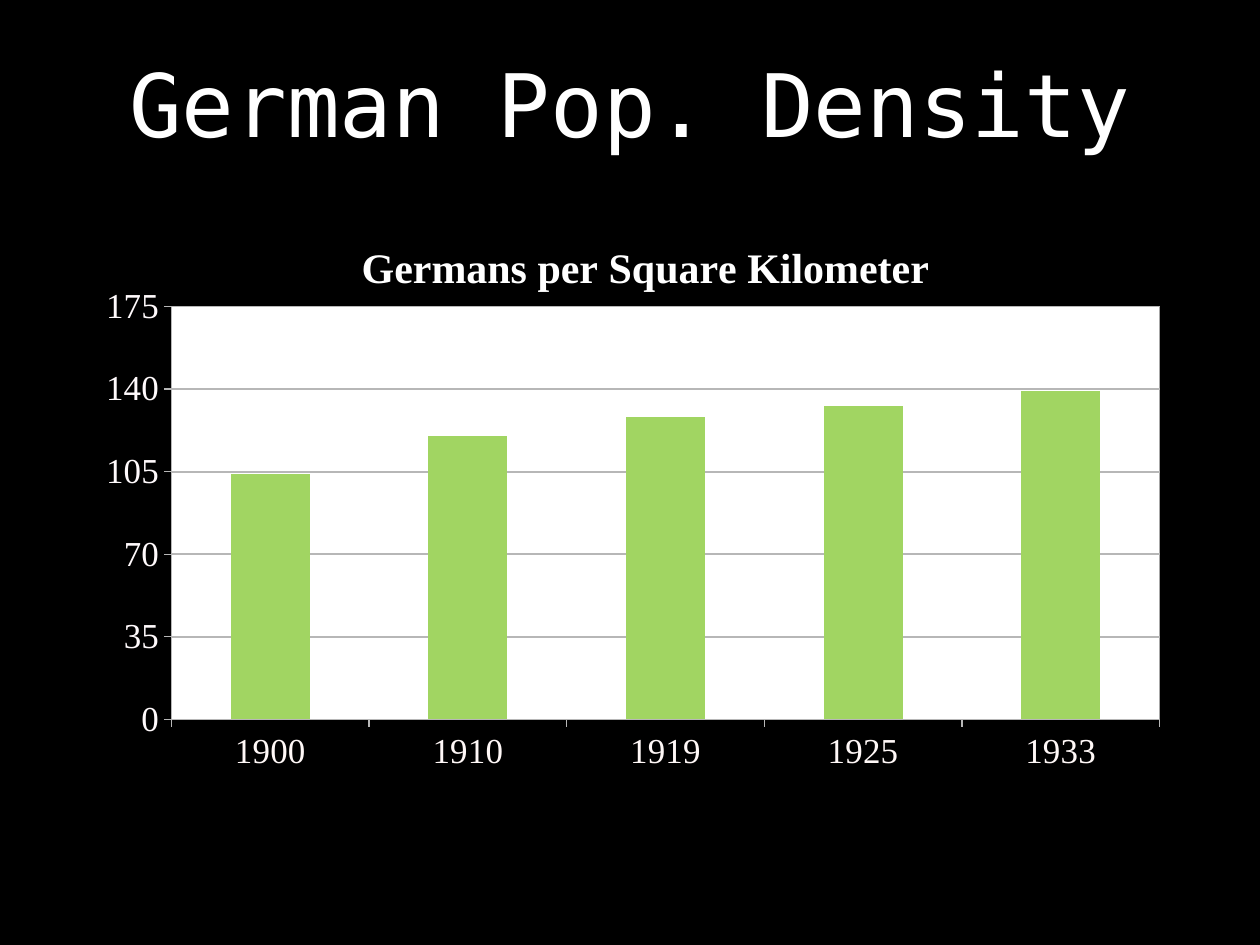
"""Build a slide with a column chart of German population density."""
from lxml import etree
from pptx import Presentation
from pptx.chart.data import CategoryChartData
from pptx.dml.color import RGBColor
from pptx.enum.chart import XL_CHART_TYPE, XL_TICK_LABEL_POSITION, XL_TICK_MARK
from pptx.enum.text import MSO_ANCHOR, PP_ALIGN
from pptx.oxml import parse_xml
from pptx.util import Inches, Pt

COLORS = {"black": "000000", "white": "FFFFFF", "green": "A1D562",
          "gray": "B7B7B7", "years": "FFF8F7", "values": "FFFAFC"}
NS = ('xmlns:c="http://schemas.openxmlformats.org/drawingml/2006/chart" '
      'xmlns:a="http://schemas.openxmlformats.org/drawingml/2006/main"')
SERIF = "Times New Roman"
CAPTION = "Germans per Square Kilometer"


def add_text(tf, text, font="DejaVu Sans Mono", size=50, color="white", bold=False):
    p = tf.paragraphs[0]
    p.alignment = PP_ALIGN.CENTER
    r = p.add_run()
    r.text = text
    r.font.name, r.font.size, r.font.bold = font, Pt(size), bold
    r.font.color.rgb = RGBColor.from_string(COLORS[color])


def make_layout(target="", **box):
    layout = parse_xml(f"<c:layout {NS}><c:manualLayout>{target}"
                       '<c:xMode val="edge"/><c:yMode val="edge"/>'
                       "</c:manualLayout></c:layout>")
    for key, value in box.items():
        etree.SubElement(layout[0], layout[0][0].tag.split("}")[0] + "}" + key, val=str(value))
    return layout


prs = Presentation()
prs.slide_width, prs.slide_height = Inches(10), Inches(7.5)
s = prs.slides.add_slide(prs.slide_layouts[6])
s.background.fill.solid()
s.background.fill.fore_color.rgb = RGBColor.from_string(COLORS["black"])

tf = s.shapes.add_textbox(Inches(0.5), Inches(0.3), Inches(9), Inches(1.03)).text_frame
tf.word_wrap = True
tf.vertical_anchor = MSO_ANCHOR.MIDDLE
tf.margin_left = tf.margin_right = tf.margin_top = tf.margin_bottom = Inches(0.04)
add_text(tf, "German Pop. Density")

data = CategoryChartData()
data.categories = ["1900", "1910", "1919", "1925", "1933"]
data.add_series(CAPTION, [104, 120, 128, 133, 139])
chart = s.shapes.add_chart(XL_CHART_TYPE.COLUMN_CLUSTERED, Inches(0.68), Inches(1.76),
                           Inches(8.53), Inches(4.49), data).chart
chart.font.name, chart.font.size = "Comic Neue", Pt(10)
chart.font.color.rgb = RGBColor.from_string(COLORS["white"])
chart.has_legend = False
chart.has_title = True
add_text(chart.chart_title.text_frame, CAPTION, font=SERIF, size=24, bold=True)
chart.chart_title.include_in_layout = True

title = chart.chart_title._element
for old in title.xpath("c:layout"):
    title.remove(old)
title.xpath("c:tx")[0].addnext(make_layout(x=0.25, y=0.02))

plot = chart.plots[0]
plot.gap_width = 150
plot.vary_by_categories = False
fill = plot.series[0].format.fill
fill.solid()
fill.fore_color.rgb = RGBColor.from_string(COLORS["green"])

for axis, color in ((chart.category_axis, "years"), (chart.value_axis, "values")):
    font = axis.tick_labels.font
    font.name, font.size = SERIF, Pt(20)
    font.color.rgb = RGBColor.from_string(COLORS[color])
    axis.major_tick_mark = XL_TICK_MARK.OUTSIDE
    axis.minor_tick_mark = XL_TICK_MARK.NONE
    axis.format.line.width = Pt(0.75)
    axis.format.line.color.rgb = RGBColor.from_string(COLORS["gray"])

chart.category_axis.tick_label_position = XL_TICK_LABEL_POSITION.LOW
axis = chart.value_axis
axis.minimum_scale, axis.maximum_scale, axis.major_unit = 0, 175, 35
axis.tick_labels.number_format = "0"
axis.tick_labels.number_format_is_linked = False
axis.has_major_gridlines = True
axis.major_gridlines.format.line.width = Pt(1)
axis.major_gridlines.format.line.color.rgb = RGBColor.from_string(COLORS["gray"])

area = chart._chartSpace.chart.plotArea
for old in area.xpath("c:layout"):
    area.remove(old)
area.insert(0, make_layout('<c:layoutTarget val="inner"/>', x=0.08, y=0.15, w=0.92, h=0.73))
area.append(parse_xml(f'<c:spPr {NS}><a:solidFill><a:srgbClr val="{COLORS["white"]}"/>'
                      "</a:solidFill></c:spPr>"))

prs.save("out.pptx")
